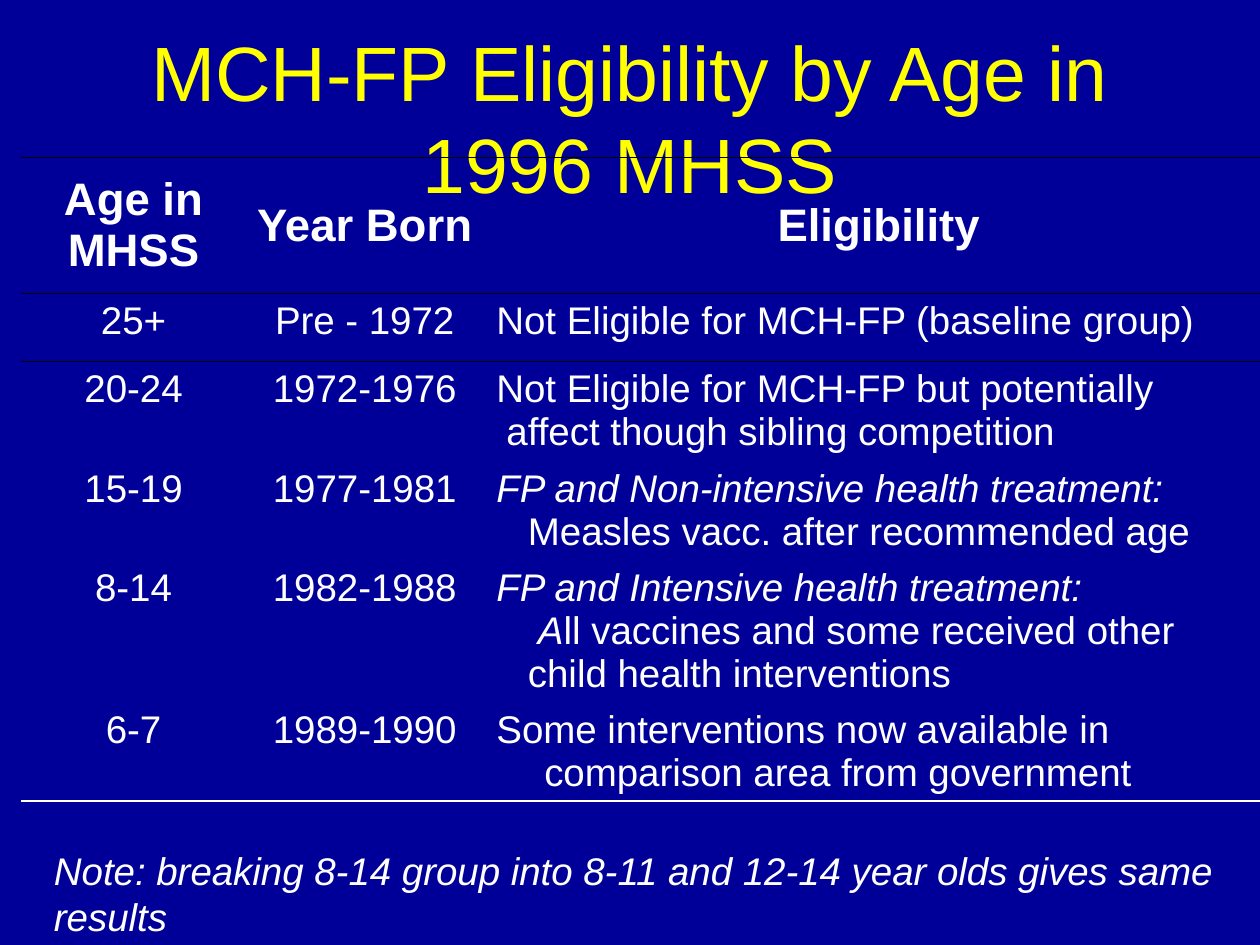
from dataclasses import dataclass
from typing import Optional

from lxml import etree
from pptx import Presentation
from pptx import util as u
from pptx.dml.color import RGBColor
from pptx.enum import text as t
from pptx.oxml.ns import qn

NO_STYLE_NO_GRID = "{2D5ABB26-0587-4C30-8999-92F81FD0307C}"
HANGING = 0.38


@dataclass(frozen=True)
class Theme:
    font: str = "Arial"
    background: str = "000099"
    title: str = "FFFF00"
    text: str = "FFFFFF"
    header_rule: str = "000000"
    bottom_rule: str = "FFFFFF"
    title_size: int = 44
    header_size: int = 26
    body_size: int = 22


@dataclass(frozen=True)
class Line:
    """One paragraph: an italic part, a plain part and a first-line offset."""
    italic: str = ""
    plain: str = ""
    offset: float = 0


@dataclass(frozen=True)
class AgeGroup:
    age: str
    born: str
    eligibility: tuple[Line, ...]
    height: float


THEME = Theme()
TITLE = "MCH-FP Eligibility by Age in 1996 MHSS"
NOTE = "Note: breaking 8-14 group into 8-11 and 12-14 year olds gives same results"
HEADERS = (("Age in", "MHSS"), ("Year Born",), ("Eligibility",))
HEADER_HEIGHT = 1.08
COLUMN_WIDTHS = (1.78, 1.89, 6.17)
AGE_GROUPS = (
    AgeGroup("25+", "Pre - 1972",
             (Line(plain="Not Eligible for MCH-FP (baseline group)"),), 0.54),
    AgeGroup("20-24", "1972-1976",
             (Line(plain="Not Eligible for MCH-FP but potentially"),
              Line(plain="affect though sibling competition", offset=0.08)), 0.79),
    AgeGroup("15-19", "1977-1981",
             (Line(italic="FP and Non-intensive health treatment:"),
              Line(plain="Measles vacc. after recommended age", offset=0.25)), 0.79),
    AgeGroup("8-14", "1982-1988",
             (Line(italic="FP and Intensive health treatment:"),
              Line("A", "ll vaccines and some received other", 0.33),
              Line(plain="child health interventions", offset=0.25)), 1.12),
    AgeGroup("6-7", "1989-1990",
             (Line(plain="Some interventions now available in "
                         "comparison area from government"),), 0.78),
)


def add_text(paragraph, content: str, *, size: int = THEME.body_size,
             color: str = THEME.text, bold: bool = False, italic: bool = False,
             align: Optional[t.PP_ALIGN] = None) -> None:
    run = paragraph.add_run()
    run.text = content
    run.font.name = THEME.font
    run.font.size = u.Pt(size)
    run.font.color.rgb = RGBColor.from_string(color)
    run.font.bold = bold
    run.font.italic = italic
    if align is not None:
        paragraph.alignment = align


def write_cell(cell, lines: tuple[Line, ...], *, left: float = 0,
               align: t.PP_ALIGN = t.PP_ALIGN.CENTER,
               anchor: t.MSO_ANCHOR = t.MSO_ANCHOR.TOP, **style) -> None:
    cell.margin_left, cell.margin_right = u.Inches(left), u.Inches(0)
    cell.margin_top = cell.margin_bottom = u.Inches(0.05)
    cell.vertical_anchor = anchor
    cell.fill.background()
    frame = cell.text_frame
    for index, line in enumerate(lines):
        paragraph = frame.add_paragraph() if index else frame.paragraphs[0]
        properties = paragraph._p.get_or_add_pPr()
        properties.set("marL", str(u.Inches(HANGING)))
        properties.set("indent", str(u.Inches(line.offset - HANGING)))
        for content, italic in ((line.italic, True), (line.plain, False)):
            if content:
                add_text(paragraph, content, italic=italic, align=align, **style)


def rule_cell(cell, rules: dict[str, str]) -> None:
    """Draw 1 pt borders; keys are lnT and lnB, in that order."""
    properties = cell._tc.get_or_add_tcPr()
    for position, (side, color) in enumerate(rules.items()):
        border = etree.Element(qn(f"a:{side}"), w=str(u.Pt(1)))
        fill = etree.SubElement(border, qn("a:solidFill"))
        etree.SubElement(fill, qn("a:srgbClr"), val=color)
        properties.insert(position, border)


def add_eligibility_table(slide) -> None:
    heights = [HEADER_HEIGHT] + [group.height for group in AGE_GROUPS]
    table = slide.shapes.add_table(
        len(heights), len(COLUMN_WIDTHS), u.Inches(0.17), u.Inches(1.25),
        u.Inches(sum(COLUMN_WIDTHS)), u.Inches(sum(heights))).table
    table.horz_banding = False
    table._tbl.tblPr.find(qn("a:tableStyleId")).text = NO_STYLE_NO_GRID
    for column, width in zip(table.columns, COLUMN_WIDTHS):
        column.width = u.Inches(width)
    for row, height in zip(table.rows, heights):
        row.height = u.Inches(height)

    # Header row
    for column, words in enumerate(HEADERS):
        write_cell(table.cell(0, column), tuple(Line(plain=word) for word in words),
                   left=0.1 if column == 2 else 0, anchor=t.MSO_ANCHOR.MIDDLE,
                   size=THEME.header_size, bold=True)

    # Age groups
    for row, group in enumerate(AGE_GROUPS, start=1):
        write_cell(table.cell(row, 0), (Line(plain=group.age),))
        write_cell(table.cell(row, 1), (Line(plain=group.born),))
        write_cell(table.cell(row, 2), group.eligibility, left=0.1,
                   align=t.PP_ALIGN.LEFT)

    # Horizontal rules
    for column in range(len(COLUMN_WIDTHS)):
        rule_cell(table.cell(0, column),
                  {"lnT": THEME.header_rule, "lnB": THEME.header_rule})
        rule_cell(table.cell(1, column), {"lnT": THEME.header_rule})
        rule_cell(table.cell(len(AGE_GROUPS), column), {"lnB": THEME.bottom_rule})


def main() -> None:
    presentation = Presentation()
    presentation.slide_width, presentation.slide_height = u.Inches(10), u.Inches(7.5)
    slide = presentation.slides.add_slide(presentation.slide_layouts[5])
    slide.background.fill.solid()
    slide.background.fill.fore_color.rgb = RGBColor.from_string(THEME.background)

    # Title
    title = slide.shapes.title
    title.left, title.top = u.Inches(0.5), u.Inches(0.3)
    title.width, title.height = u.Inches(9), u.Inches(1.25)
    title.text_frame.auto_size = t.MSO_AUTO_SIZE.NONE
    title.text_frame.vertical_anchor = t.MSO_ANCHOR.MIDDLE
    add_text(title.text_frame.paragraphs[0], TITLE, size=THEME.title_size,
             color=THEME.title, align=t.PP_ALIGN.CENTER)

    add_eligibility_table(slide)

    # Note below the table
    note = slide.shapes.add_textbox(u.Inches(0.33), u.Inches(6.67),
                                    u.Inches(9.5), u.Inches(0.83))
    note.text_frame.word_wrap = True
    add_text(note.text_frame.paragraphs[0], NOTE, italic=True)

    presentation.save("out.pptx")


if __name__ == "__main__":
    main()
